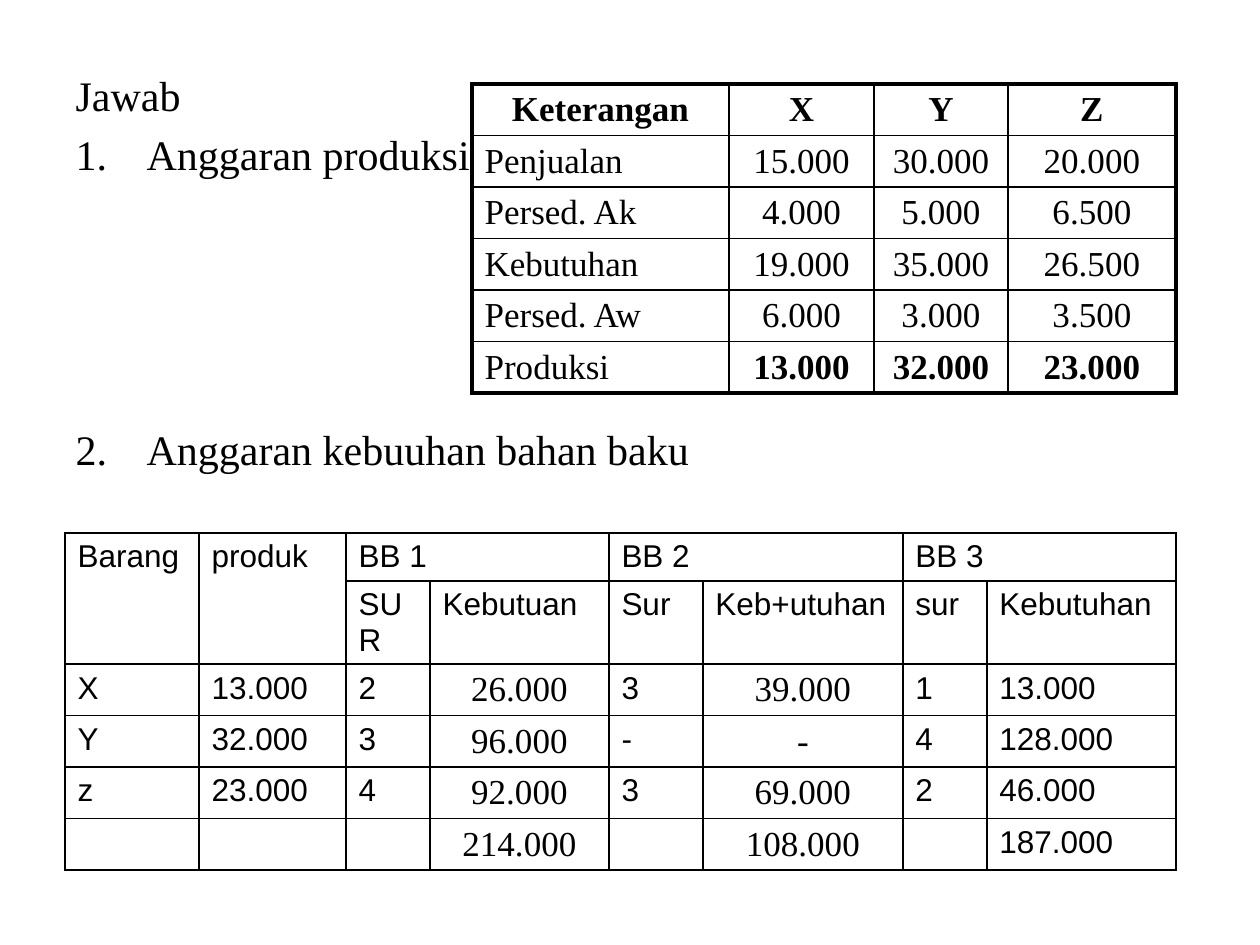
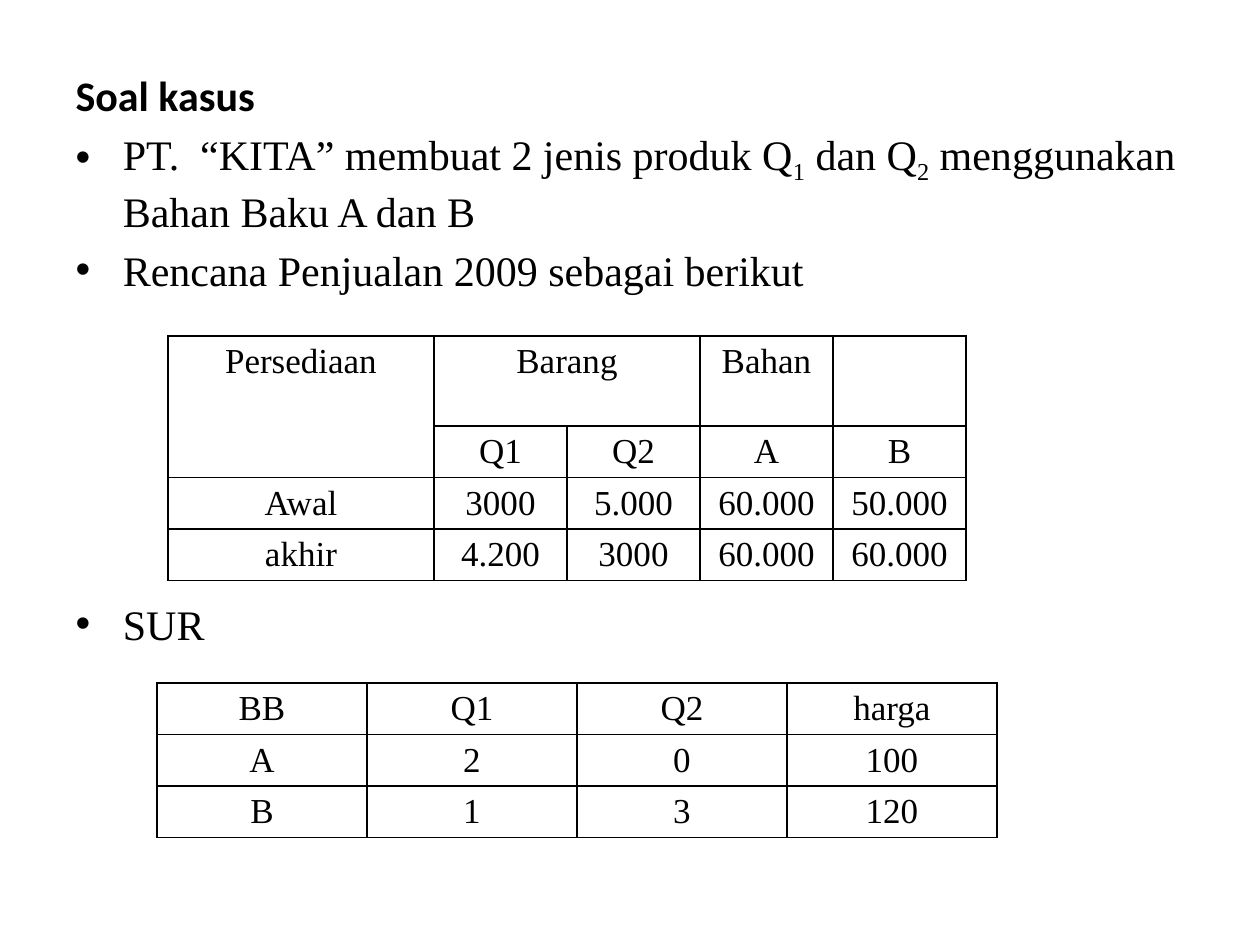
"""Build two slides of production and raw-material budget tables."""
from lxml import etree
from pptx import Presentation, util as u
from pptx.dml.color import RGBColor
from pptx.enum import text
from pptx.oxml import ns

PX = u.Inches(1) / 126
BLACK = RGBColor(0, 0, 0)
SERIF, SANS, HEAD = "Times New Roman", "Arial", "Calibri"


def px(n):
    return u.Emu(round(n * PX))


class Deck:
    def __init__(self):
        self.prs = Presentation()
        self.prs.slide_width, self.prs.slide_height = px(1260), px(945)
        self.s = None

    def slide(self):
        self.s = self.prs.slides.add_slide(self.prs.slide_layouts[1])
        title = self.s.shapes.title.element
        title.getparent().remove(title)
        self.tf = self.s.placeholders[1].text_frame
        sp = self.s.placeholders[1]
        sp.left, sp.top, sp.width, sp.height = px(63), px(63), px(1134), px(781)
        self.tf.auto_size = text.MSO_AUTO_SIZE.NONE
        self.fresh = True

    def run(self, p, words, font=SERIF, size=24, bold=False):
        r = p.add_run()
        r.text = words
        r.font.name, r.font.size, r.font.bold = font, u.Pt(size), bold
        r.font.color.rgb = BLACK
        return r

    def item(self, *words, mark="bullet", gap=None, font=SERIF, bold=False):
        p = self.tf.paragraphs[0] if self.fresh else self.tf.add_paragraph()
        self.fresh = False
        if gap:
            p.space_before = u.Pt(gap)
        pPr = p._p.get_or_add_pPr()
        if mark == "none":
            etree.SubElement(pPr, ns.qn("a:buNone"))
        elif mark == "number":
            pPr.set("marL", str(px(71)))
            pPr.set("indent", str(-px(71)))
            etree.SubElement(pPr, ns.qn("a:buFont"), typeface="+mj-lt")
            etree.SubElement(pPr, ns.qn("a:buAutoNum"), type="arabicPeriod")
        for i, part in enumerate(words):
            r = self.run(p, part, font, bold=bold)
            if i % 2:
                r.font._element.set("baseline", "-25000")

    def border(self, cell, widths):
        tcPr = cell._tc.get_or_add_tcPr()
        for side, width in zip("LRTB", widths):
            ln = etree.SubElement(tcPr, ns.qn("a:ln" + side), w=str(u.Pt(width)))
            fill = etree.SubElement(ln, ns.qn("a:solidFill"))
            etree.SubElement(fill, ns.qn("a:srgbClr"), val=str(BLACK))

    def table(self, rows, x, y, cols, heights, look, merges=(), edge=1):
        frame = self.s.shapes.add_table(len(rows), len(cols), px(x), px(y),
                                        px(sum(cols)), px(sum(heights)))
        t = frame.table
        t.first_row = t.horz_banding = False
        for col, width in zip(t.columns, cols):
            col.width = px(width)
        for row, height in zip(t.rows, heights):
            row.height = px(height)
        last_row, last_col = len(rows) - 1, len(cols) - 1
        for i, row in enumerate(rows):
            for j, words in enumerate(row):
                cell = t.cell(i, j)
                outer = (j == 0, j == last_col, i == 0, i == last_row)
                self.border(cell, [edge if o else 1 for o in outer])
                cell.fill.background()
                if words:
                    font, size, bold, centred = look(i, j)
                    p = cell.text_frame.paragraphs[0]
                    if centred:
                        p.alignment = text.PP_ALIGN.CENTER
                    self.run(p, words, font, size, bold)
        for top, left, bottom, right in merges:
            t.cell(top, left).merge(t.cell(bottom, right))


def production_look(i, j):
    return SERIF, 20, i == 0 or (i == 5 and j > 0), i == 0 or j > 0


def material_look(i, j):
    if i > 1 and j in (3, 5):
        return SERIF, 20, False, True
    return SANS, 18, False, False


def centred_look(i, j):
    return SERIF, 20, False, True


def answer(deck):
    deck.slide()
    deck.item("Jawab", mark="none")
    deck.item("Anggaran produksi", mark="number")
    deck.item("Anggaran kebuuhan bahan baku", mark="number", gap=139.8)
    production = [
        ["Keterangan", "X", "Y", "Z"],
        ["Penjualan", "15.000", "30.000", "20.000"],
        ["Persed. Ak", "4.000", "5.000", "6.500"],
        ["Kebutuhan", "19.000", "35.000", "26.500"],
        ["Persed. Aw", "6.000", "3.000", "3.500"],
        ["Produksi", "13.000", "32.000", "23.000"],
    ]
    deck.table(production, 472, 84, [257, 145, 134, 168], [51] * 6,
               production_look, edge=2.25)
    material = [
        ["Barang", "produk", "BB 1", "", "BB 2", "", "BB 3", ""],
        ["", "", "SUR", "Kebutuan", "Sur", "Keb+utuhan", "sur", "Kebutuhan"],
        ["X", "13.000", "2", "26.000", "3", "39.000", "1", "13.000"],
        ["Y", "32.000", "3", "96.000", "-", "-", "4", "128.000"],
        ["z", "23.000", "4", "92.000", "3", "69.000", "2", "46.000"],
        ["", "", "", "214.000", "", "108.000", "", "187.000"],
    ]
    merges = [(0, j, 1, j) for j in (0, 1)] + [(0, j, 0, j + 1) for j in (2, 4, 6)]
    deck.table(material, 65, 533, [134, 147, 84, 179, 94, 200, 84, 189],
               [47, 83] + [51] * 4, material_look, merges)


def case(deck):
    deck.slide()
    deck.item("Soal kasus", mark="none", font=HEAD, bold=True)
    deck.item("PT.  “KITA” membuat 2 jenis produk Q", "1", " dan Q", "2",
              " menggunakan Bahan Baku A dan B")
    deck.item("Rencana Penjualan 2009 sebagai berikut")
    deck.item("SUR", gap=173.5)
    stock = [
        ["Persediaan", "Barang", "", "Bahan", ""],
        ["", "Q1", "Q2", "A", "B"],
        ["Awal", "3000", "5.000", "60.000", "50.000"],
        ["akhir", "4.200", "3000", "60.000", "60.000"],
    ]
    deck.table(stock, 168, 336, [266] + [133] * 4, [90] + [51] * 3,
               centred_look, [(0, 0, 1, 0), (0, 1, 0, 2)])
    usage = [
        ["BB", "Q1", "Q2", "harga"],
        ["A", "2", "0", "100"],
        ["B", "1", "3", "120"],
    ]
    deck.table(usage, 157, 683, [210] * 4, [51] * 3, centred_look)


def main():
    deck = Deck()
    answer(deck)
    case(deck)
    deck.prs.save("out.pptx")


if __name__ == "__main__":
    main()
